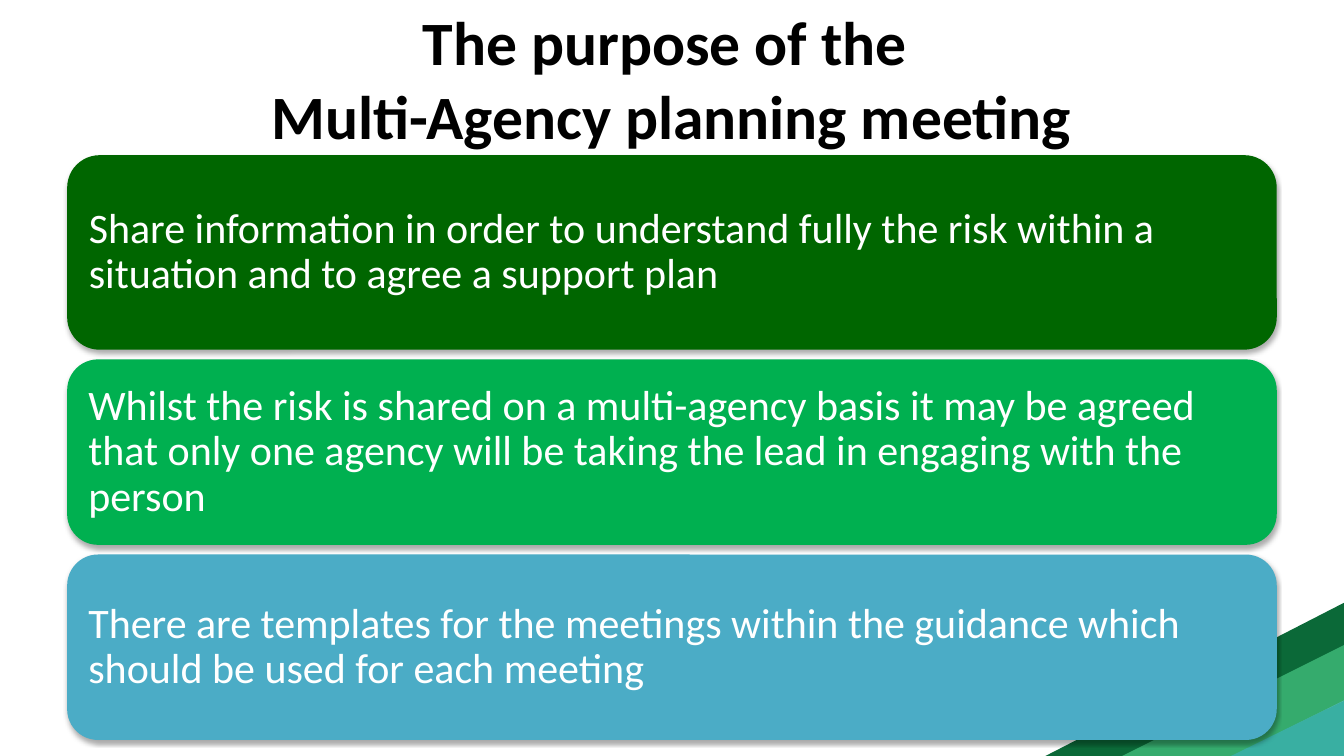
import dataclasses

import lxml.etree
import pptx
import pptx.dml.color
import pptx.enum.shapes
import pptx.enum.text
import pptx.oxml.ns
import pptx.util

MSO = pptx.enum.shapes.MSO_SHAPE
ALIGN = pptx.enum.text.PP_ALIGN


@dataclasses.dataclass(frozen=True)
class Theme:
    """Colours, font and type sizes of the slide."""

    font: str = "Calibri"
    title_size: int = 44
    card_size: int = 30
    title_ink: str = "000000"
    card_ink: str = "FFFFFF"
    cards: tuple = ("006600", "00B050", "4BACC6")
    stripes: tuple = ("0B6938", "35AB6D")
    corner: str = "39AFA2"


THEME = Theme()
WIDTH, HEIGHT = pptx.util.Inches(13.33), pptx.util.Inches(7.5)
MARGIN, CONTENT = 5, 90
CARD_TOP, CARD_GAP = 20.53, 1.28
CARDS = (
    (25.73, "Share information in order to understand fully the risk within a "
            "situation and to agree a support plan"),
    (24.53, "Whilst the risk is shared on a multi-agency basis it may be agreed "
            "that only one agency will be taking the lead in engaging with the person"),
    (24.53, "There are templates for the meetings within the guidance which "
            "should be used for each meeting"),
)


def area(left, top, width, height):
    """Turn percentages of the slide into lengths."""
    return (int(WIDTH * left / 100), int(HEIGHT * top / 100),
            int(WIDTH * width / 100), int(HEIGHT * height / 100))


def write(tf, text, size, color, bold=False, align=ALIGN.LEFT, spacing=1.0):
    """Fill a text frame with one formatted paragraph."""
    tf.word_wrap = True
    tf.auto_size = pptx.enum.text.MSO_AUTO_SIZE.NONE
    tf.vertical_anchor = pptx.enum.text.MSO_ANCHOR.MIDDLE
    p = tf.paragraphs[0]
    p.text = text
    p.alignment, p.line_spacing = align, spacing
    for r in p.runs:
        r.font.name, r.font.size, r.font.bold = THEME.font, pptx.util.Pt(size), bold
        r.font.color.rgb = pptx.dml.color.RGBColor.from_string(color)


def add_solid(slide, kind, box, color):
    """Add a preset shape with a plain fill, no line and no shadow."""
    sp = slide.shapes.add_shape(kind, *area(*box))
    sp.shadow.inherit = False
    sp.fill.solid()
    sp.fill.fore_color.rgb = pptx.dml.color.RGBColor.from_string(color)
    sp.line.fill.background()
    return sp


def add_shadow(sp):
    """Give a shape a soft shadow that falls straight down."""
    qn = pptx.oxml.ns.qn
    effects = sp._element.spPr.find(qn("a:effectLst"))
    shadow = lxml.etree.SubElement(
        effects, qn("a:outerShdw"), blurRad=str(pptx.util.Pt(3.5)),
        dist=str(pptx.util.Pt(2.2)), dir="5400000", rotWithShape="0")
    color = lxml.etree.SubElement(shadow, qn("a:srgbClr"), val="000000")
    lxml.etree.SubElement(color, qn("a:alpha"), val="32000")


def add_corner(slide):
    """Draw the slanted bands in the bottom right corner."""
    for (left, top), color in zip(((77.78, 79.73), (83.5, 85.33)), THEME.stripes):
        sp = add_solid(slide, MSO.DIAGONAL_STRIPE,
                       (left, top, 100 - left, 100 - top), color)
        sp.rotation = 180
    sp = add_solid(slide, MSO.RIGHT_TRIANGLE, (91.6, 92.67, 8.4, 7.33), THEME.corner)
    sp._element.spPr.xfrm.set("flipH", "1")


def add_title(slide, text):
    """Place the title placeholder and fill it."""
    sp = slide.shapes.title
    sp.left, sp.top, sp.width, sp.height = area(MARGIN, 2, CONTENT, 16.67)
    write(sp.text_frame, text, THEME.title_size, THEME.title_ink,
          bold=True, align=ALIGN.CENTER)


def add_card(slide, top, height, text, color):
    """Add a rounded card with its statement."""
    sp = add_solid(slide, MSO.ROUNDED_RECTANGLE, (MARGIN, top, CONTENT, height), color)
    add_shadow(sp)
    tf = sp.text_frame
    tf.margin_left = tf.margin_right = pptx.util.Inches(0.12)
    tf.margin_top = tf.margin_bottom = pptx.util.Inches(0.12)
    write(tf, text, THEME.card_size, THEME.card_ink, spacing=0.9)


def main():
    """Build the slide and save it."""
    prs = pptx.Presentation()
    prs.slide_width, prs.slide_height = WIDTH, HEIGHT
    slide = prs.slides.add_slide(prs.slide_layouts.get_by_name("Title Only"))
    add_corner(slide)
    add_title(slide, "The purpose of the \vMulti-Agency planning meeting")
    top = CARD_TOP
    for (height, text), color in zip(CARDS, THEME.cards):
        add_card(slide, top, height, text, color)
        top += height + CARD_GAP
    prs.save("out.pptx")


if __name__ == "__main__":
    main()
